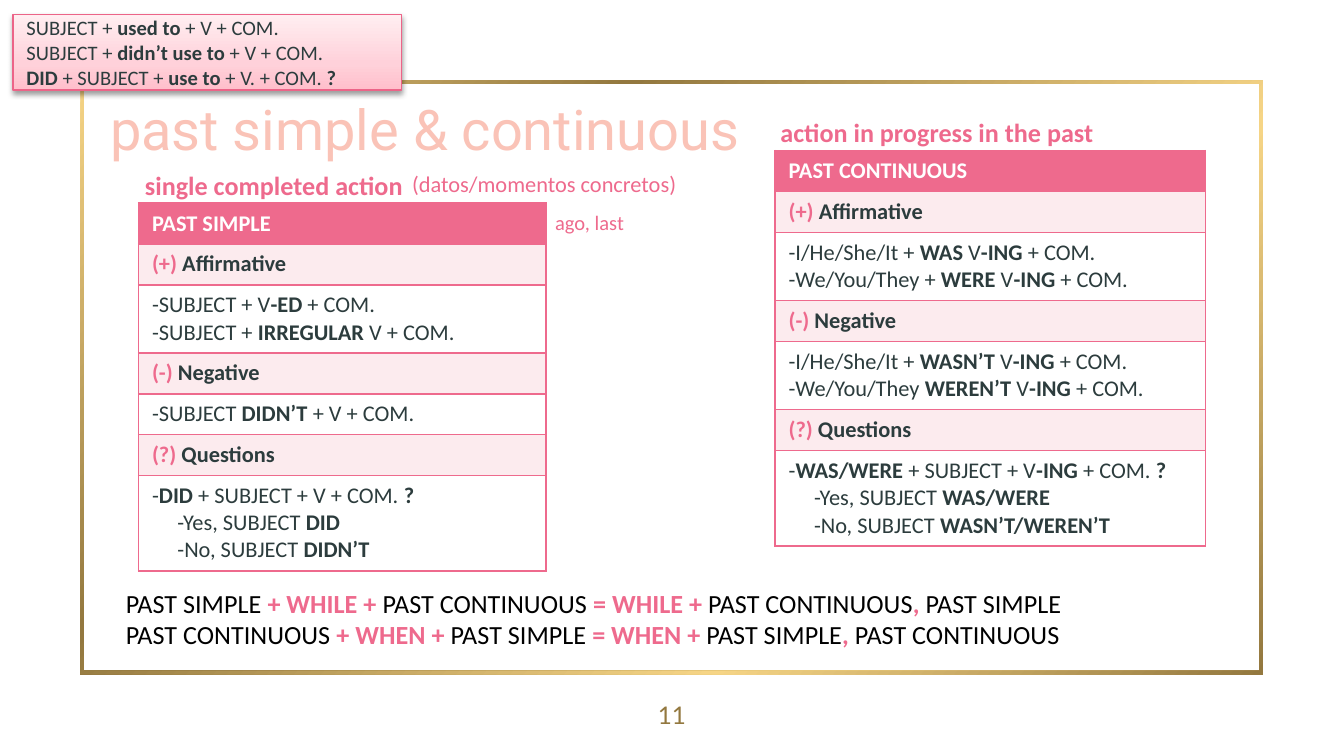
import pptx
import pptx.dml.color
import pptx.enum.shapes
import pptx.enum.text
import pptx.oxml
import pptx.oxml.ns
import pptx.util

Cm = pptx.util.Cm
Pt = pptx.util.Pt
align = pptx.enum.text.PP_ALIGN
anchor = pptx.enum.text.MSO_ANCHOR
kinds = pptx.enum.shapes.MSO_SHAPE
space = pptx.oxml.ns.nsdecls("a")
pink, dark, pale, white, gold = "EE6A8D", "2C3C3D", "FCEBEE", "FFFFFF", "93783F"


def hue(code):
    return pptx.dml.color.RGBColor.from_string(code)


# Asterisks enclose bold parts; a leading ">" indents the line.
def write(frame, lines, size, color, accent=None, bold=False, face="Calibri"):
    for spot, line in enumerate(lines):
        para = frame.add_paragraph() if spot else frame.paragraphs[0]
        para.font.name = face
        para.font.size = Pt(size)
        para.font.bold = bold
        para.font.color.rgb = hue(color)
        para.alignment = align.LEFT
        if line.startswith(">"):
            para._p.get_or_add_pPr().set("marL", str(Cm(0.48)))
        for turn, part in enumerate(line.lstrip(">").split("*")):
            if part:
                run = para.add_run()
                run.text = part
                if turn % 2:
                    run.font.bold = True
                    run.font.color.rgb = hue(accent or color)


deck = pptx.Presentation()
deck.slide_width = Cm(25.4)
deck.slide_height = Cm(14.29)
slide = deck.slides.add_slide(deck.slide_layouts[5])
shapes = slide.shapes

title = shapes.title
title.left, title.top, title.width, title.height = Cm(2.08), Cm(1.93), Cm(13.59), Cm(1.09)
frame = title.text_frame
frame.margin_left = frame.margin_right = frame.margin_top = frame.margin_bottom = 0
frame.vertical_anchor = anchor.TOP
write(frame, ["past simple & continuous"], 30, "FAC3B7", face="Roboto")
frame.paragraphs[0].line_spacing = 0.9

border = shapes.add_shape(kinds.FRAME, Cm(1.52), Cm(1.52), Cm(22.35), Cm(11.23))
border.adjustments[0] = 0.006
border.line.fill.background()

tables = [
    (2.62, 3.84, 7.7, "PAST SIMPLE", [
        ["-SUBJECT + V*-ED* + COM.", "-SUBJECT + *IRREGULAR* V + COM."],
        ["-SUBJECT *DIDN’T* + V + COM."],
        ["-*DID* + SUBJECT + V + COM. *?*", ">-Yes, SUBJECT *DID*", ">-No, SUBJECT *DIDN’T*"],
    ]),
    (14.65, 2.85, 8.13, "PAST CONTINUOUS", [
        ["-I/He/She/It + *WAS* V*-ING* + COM.", "-We/You/They + *WERE* V*-ING* + COM."],
        ["-I/He/She/It + *WASN’T* V*-ING *+ COM.", "-We/You/They *WEREN’T* V*-ING* + COM."],
        ["-*WAS/WERE* + SUBJECT + V*-ING* + COM. *?*", ">-Yes, SUBJECT *WAS/WERE*",
         ">-No, SUBJECT *WASN’T/WEREN’T*"],
    ]),
]
heads = ["*(+)* Affirmative", "*(-)* Negative", "*(?)* Questions"]
for left, top, width, tense, forms in tables:
    rows = [([tense], white, pink, True)]
    for head, form in zip(heads, forms):
        rows += [([head], dark, pale, True), (form, dark, white, False)]
    tall = [0.25 + 0.52 * len(row[0]) for row in rows]
    grid = shapes.add_table(len(rows), 1, Cm(left), Cm(top), Cm(width), Cm(sum(tall))).table
    grid.first_row = grid.horz_banding = False
    for spot, (lines, color, back, bold) in enumerate(rows):
        grid.rows[spot].height = Cm(tall[spot])
        cell = grid.cell(spot, 0)
        cell.fill.solid()
        cell.fill.fore_color.rgb = hue(back)
        write(cell.text_frame, lines, 12, color, pink if bold else None, bold)
        for rank, side in enumerate("LRTB"):
            edge = pptx.oxml.parse_xml(
                f'<a:ln{side} {space} w="{Pt(1)}"><a:solidFill>'
                f'<a:srgbClr val="{pink}"/></a:solidFill></a:ln{side}>')
            cell._tc.get_or_add_tcPr().insert(rank, edge)

notes = [
    (2.49, 3.07, 5.54, 0.86, 14, pink, True, ["single completed action"]),
    (14.5, 2.08, 6.68, 0.86, 14, pink, True, ["action in progress in the past"]),
    (2.13, 10.97, 21.13, 1.45, 14, "000000", False, [
        "PAST SIMPLE *+ WHILE + *PAST CONTINUOUS *= WHILE + *PAST CONTINUOUS*,* PAST SIMPLE",
        "PAST CONTINUOUS *+ WHEN + *PAST SIMPLE *= WHEN + *PAST SIMPLE*,* PAST CONTINUOUS"]),
    (7.54, 3.1, 5.87, 0.76, 12, pink, False, ["(datos/momentos concretos)"]),
    (10.24, 3.84, 1.98, 0.74, 11, pink, False, ["ago, last"]),
]
for left, top, width, height, size, color, bold, lines in notes:
    frame = shapes.add_textbox(Cm(left), Cm(top), Cm(width), Cm(height)).text_frame
    frame.word_wrap = False
    frame.auto_size = pptx.enum.text.MSO_AUTO_SIZE.SHAPE_TO_FIT_TEXT
    write(frame, lines, size, color, pink, bold)

frame = shapes.add_textbox(Cm(11.94), Cm(12.75), Cm(1.52), Cm(1.52)).text_frame
frame.word_wrap = True
frame.margin_left = frame.margin_right = frame.margin_top = frame.margin_bottom = 0
frame.vertical_anchor = anchor.MIDDLE
write(frame, ["11"], 13, gold, face="Lato")
frame.paragraphs[0].alignment = align.CENTER

box = shapes.add_shape(kinds.RECTANGLE, Cm(0.25), Cm(0.28), Cm(7.34), Cm(1.42))
box.line.color.rgb = hue("EC6488")
box.line.width = Pt(0.75)
box.text_frame.vertical_anchor = anchor.MIDDLE
write(box.text_frame, [
    "SUBJECT + *used to* + V + COM.",
    "SUBJECT + *didn’t use to* + V + COM.",
    "*DID* + SUBJECT + *use to* + V. + COM. *?*"], 11, dark)

blends = [
    (border, 45, [(0, "F6D586"), (31, gold), (69, "F6D586"), (100, gold)]),
    (box, 270, [(0, "FFBFCB"), (35, "FFD1DA"), (100, "FFEEF1")]),
]
for shape, angle, stops in blends:
    shape.shadow.inherit = False
    shape.fill.gradient()
    old = shape._element.spPr.find(pptx.oxml.ns.qn("a:gradFill"))
    marks = "".join(f'<a:gs pos="{at * 1000}"><a:srgbClr val="{code}"/></a:gs>' for at, code in stops)
    new = pptx.oxml.parse_xml(
        f'<a:gradFill {space} rotWithShape="1"><a:gsLst>{marks}</a:gsLst>'
        f'<a:lin ang="{angle * 60000}" scaled="0"/></a:gradFill>')
    old.getparent().replace(old, new)

shade = pptx.oxml.parse_xml(
    f'<a:outerShdw {space} blurRad="{Pt(3.1)}" dist="{Pt(1.6)}" dir="5400000" rotWithShape="0">'
    '<a:srgbClr val="000000"><a:alpha val="38000"/></a:srgbClr></a:outerShdw>')
box._element.spPr.find(pptx.oxml.ns.qn("a:effectLst")).append(shade)

deck.save("out.pptx")
